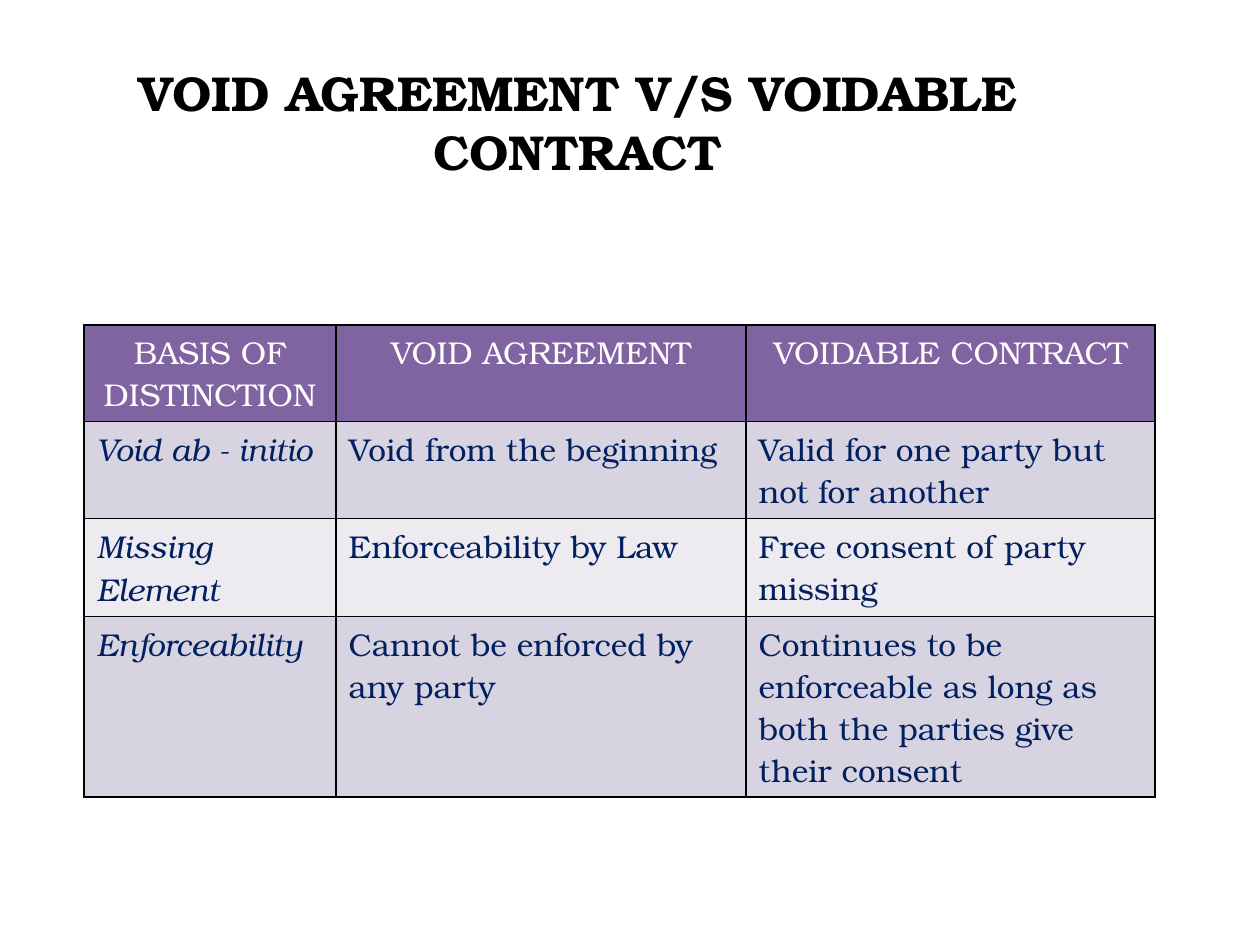
from lxml import etree
from pptx import Presentation
from pptx import util as u
from pptx.dml.color import RGBColor
from pptx.enum import text
from pptx.oxml import ns

SCALE = 914400 / 126
FONT = "TeX Gyre Bonum"
BLACK = RGBColor(0x00, 0x00, 0x00)
WHITE = RGBColor(0xFF, 0xFF, 0xFF)
NAVY = RGBColor(0x00, 0x20, 0x60)
PURPLE = RGBColor(0x80, 0x64, 0xA2)
LILAC = RGBColor(0xD8, 0xD3, 0xE0)
PALE_LILAC = RGBColor(0xED, 0xEA, 0xF0)

COLUMN_WIDTHS = [252, 410, 409]
ROW_HEIGHT = 52
ROWS = [
    ["BASIS OF DISTINCTION", "VOID AGREEMENT", "VOIDABLE CONTRACT"],
    ["Void ab - initio", "Void from the beginning", "Valid for one party but not for another"],
    ["Missing Element", "Enforceability by Law", "Free consent of party missing"],
    ["Enforceability", "Cannot be enforced by any party",
     "Continues to be enforceable as long as both the parties give their consent"],
]


def px(value):
    return u.Emu(round(value * SCALE))


def write(frame, words, color, alignment, **font_format):
    paragraph = frame.paragraphs[0]
    paragraph.alignment = alignment
    run = paragraph.add_run()
    run.text = words
    run.font.color.rgb = color
    for name, value in {"name": FONT, **font_format}.items():
        setattr(run.font, name, value)


def add_borders(cell):
    properties = cell._tc.get_or_add_tcPr()
    for index, side in enumerate(["lnL", "lnR", "lnT", "lnB"]):
        line = etree.Element(ns.qn(f"a:{side}"), w=str(u.Pt(1)))
        fill = etree.SubElement(line, ns.qn("a:solidFill"))
        etree.SubElement(fill, ns.qn("a:srgbClr"), val=str(BLACK))
        properties.insert(index, line)


def add_title(slide, left, top, width, height):
    title = slide.shapes.title
    box = {"left": left, "top": top, "width": width, "height": height}
    for name, value in box.items():
        setattr(title, name, px(value))
    frame = title.text_frame
    frame_format = {
        "word_wrap": True,
        "auto_size": text.MSO_AUTO_SIZE.NONE,
        "vertical_anchor": text.MSO_ANCHOR.MIDDLE,
    }
    for name, value in frame_format.items():
        setattr(frame, name, value)
    write(frame, "VOID AGREEMENT V/S VOIDABLE CONTRACT", BLACK,
          text.PP_ALIGN.CENTER, size=u.Pt(28), bold=True)


def add_comparison(slide, left, top, width, height):
    box = map(px, (left, top, width, height))
    table = slide.shapes.add_table(len(ROWS), len(COLUMN_WIDTHS), *box).table
    for column, column_width in zip(table.columns, COLUMN_WIDTHS):
        column.width = px(column_width)
    for row_index, words_in_row in enumerate(ROWS):
        table.rows[row_index].height = px(ROW_HEIGHT)
        header = row_index == 0
        band = LILAC if row_index % 2 else PALE_LILAC
        for column_index, words in enumerate(words_in_row):
            cell = table.cell(row_index, column_index)
            cell.fill.solid()
            cell.fill.fore_color.rgb = PURPLE if header else band
            add_borders(cell)
            write(cell.text_frame, words, WHITE if header else NAVY,
                  text.PP_ALIGN.CENTER if header else text.PP_ALIGN.LEFT,
                  size=u.Pt(18), bold=False,
                  italic=not header and column_index == 0)


def main():
    presentation = Presentation()
    presentation.slide_width = px(1260)
    presentation.slide_height = px(945)
    slide = presentation.slides.add_slide(presentation.slide_layouts[5])
    add_title(slide, 42, 42, 1071, 158)
    add_comparison(slide, 84, 325, sum(COLUMN_WIDTHS), 428)
    presentation.save("out.pptx")


if __name__ == "__main__":
    main()
